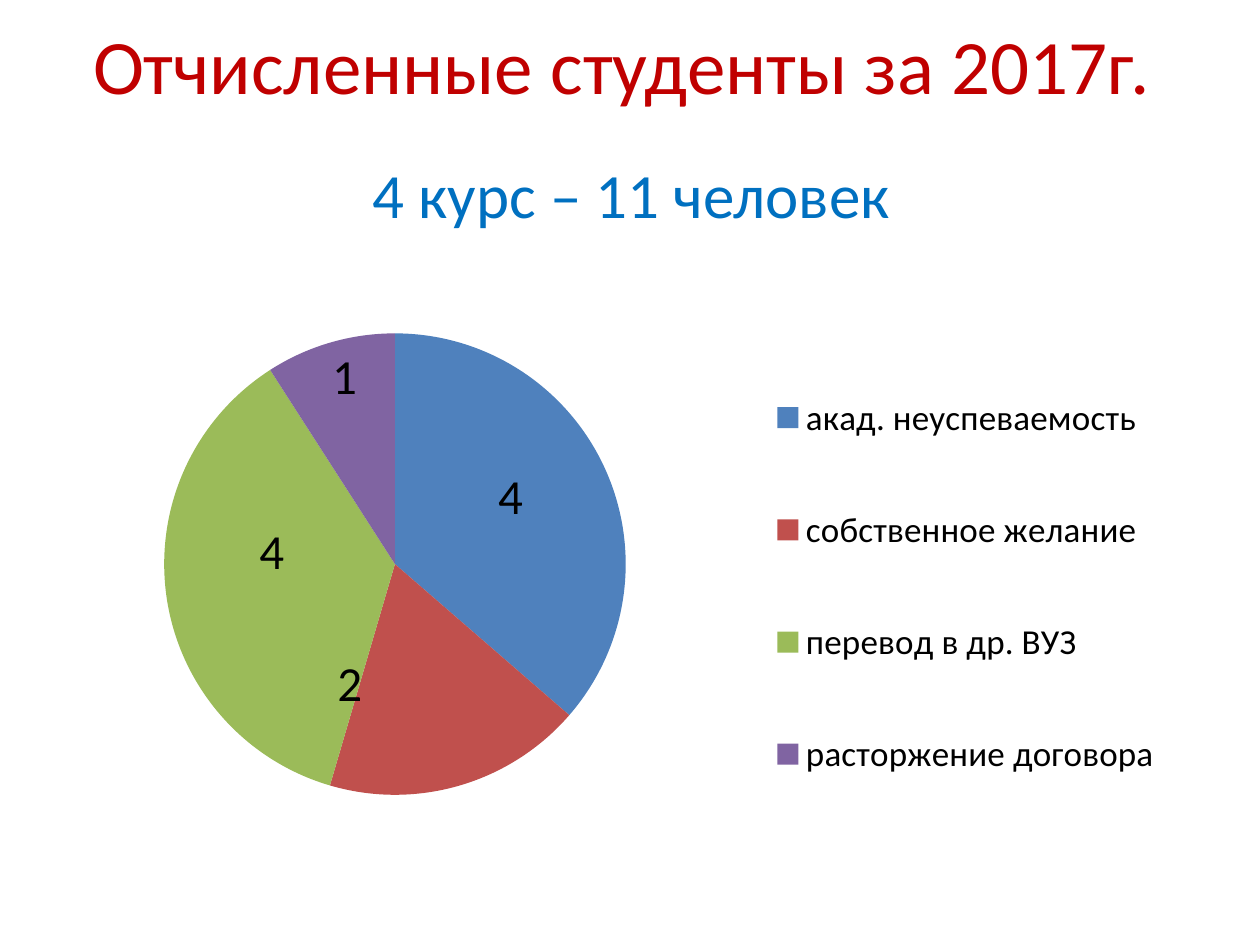
"""Build a slide with a pie chart of students expelled in 2017."""
from lxml import etree
from pptx import Presentation
from pptx.chart.data import CategoryChartData
from pptx.dml.color import RGBColor
from pptx.enum.chart import XL_CHART_TYPE, XL_LABEL_POSITION, XL_LEGEND_POSITION
from pptx.enum.text import MSO_ANCHOR, PP_ALIGN
from pptx.oxml.ns import qn
from pptx.util import Inches, Pt

PIE = XL_CHART_TYPE.PIE
FIT = XL_LABEL_POSITION.BEST_FIT
RIGHT = XL_LEGEND_POSITION.RIGHT
MIDDLE = MSO_ANCHOR.MIDDLE
CENTER = PP_ALIGN.CENTER

FONT = "Calibri"
COLORS = {"title": "C00000", "group": "0070C0", "text": "000000"}
TITLE = "Отчисленные студенты за 2017г. "
GROUP = "4 курс – 11 человек"
REASONS = [
    ("акад. неуспеваемость", 4, "4F81BD"),
    ("собственное желание", 2, "C0504D"),
    ("перевод в др. ВУЗ", 4, "9BBB59"),
    ("расторжение договора", 1, "8064A2"),
]
LEFT, WIDTH, LINE = 0.51, 9, 0.93
SHIFTS = [(-0.1, 0.1), (-0.11, -0.22), (0.11, -0.12)]
PLOT = (0.15 / WIDTH, 0.08, 0.55, 0.74)
LEGEND = (0.61, 0.07, 0.37, 0.83)


def place(shape, top, height):
    shape.left, shape.top = Inches(LEFT), Inches(top)
    shape.width, shape.height = Inches(WIDTH), Inches(height)


def style(font, size, color):
    font.name, font.size = FONT, Pt(size)
    font.color.rgb = RGBColor.from_string(COLORS[color])


def write(shape, text, size, color):
    frame = shape.text_frame
    frame.word_wrap = True
    frame.vertical_anchor = MIDDLE
    para = frame.paragraphs[0]
    para.alignment = CENTER
    run = para.add_run()
    run.text = text
    style(run.font, size, color)


def set_layout(node, at, box, inner=False):
    for old in node.findall(qn("c:layout")):
        node.remove(old)
    layout = etree.Element(qn("c:layout"))
    manual = etree.SubElement(layout, qn("c:manualLayout"))
    parts = [("layoutTarget", "inner")] if inner else []
    if len(box) == 4:
        parts += [("xMode", "edge"), ("yMode", "edge")]
    parts += zip("xywh", box)
    for name, val in parts:
        etree.SubElement(manual, qn(f"c:{name}")).set("val", str(val))
    node.insert(at, layout)


def add_pie(slide):
    data = CategoryChartData()
    data.categories = [name for name, _, _ in REASONS]
    data.add_series("Series 1", [count for _, count, _ in REASONS])
    frame = slide.shapes.add_chart(
        PIE, Inches(LEFT), Inches(2.25), Inches(WIDTH), Inches(4.95), data)
    chart = frame.chart
    chart.has_title = False
    style(chart.font, 18, "text")
    chart.has_legend = True
    legend = chart.legend
    legend.position = RIGHT
    legend.include_in_layout = False
    style(legend.font, 20, "text")
    set_layout(legend._element, 1, LEGEND)

    plot = chart.plots[0]
    plot.vary_by_categories = True
    set_layout(plot._element.getparent(), 0, PLOT, True)
    series = plot.series[0]
    labels = series.data_labels
    labels.show_value = True
    labels.position = FIT
    style(labels.font, 28, "text")
    for i, (_, _, color) in enumerate(REASONS):
        fill = series.points[i].format.fill
        fill.solid()
        fill.fore_color.rgb = RGBColor.from_string(color)
    for i, shift in enumerate(SHIFTS):
        label = series.points[i].data_label
        style(label.font, 28, "text")
        label.position = FIT
        set_layout(labels._element.findall(qn("c:dLbl"))[i], 1, shift)


def main():
    deck = Presentation()
    deck.slide_width, deck.slide_height = Inches(10), Inches(7.5)
    slide = deck.slides.add_slide(deck.slide_layouts[5])
    title = slide.shapes.title
    place(title, 0.04, LINE)
    write(title, TITLE, 44, "title")
    add_pie(slide)
    group = slide.shapes.add_textbox(0, 0, 0, 0)
    place(group, 1.07, LINE)
    write(group, GROUP, 36, "group")
    deck.save("out.pptx")


if __name__ == "__main__":
    main()
